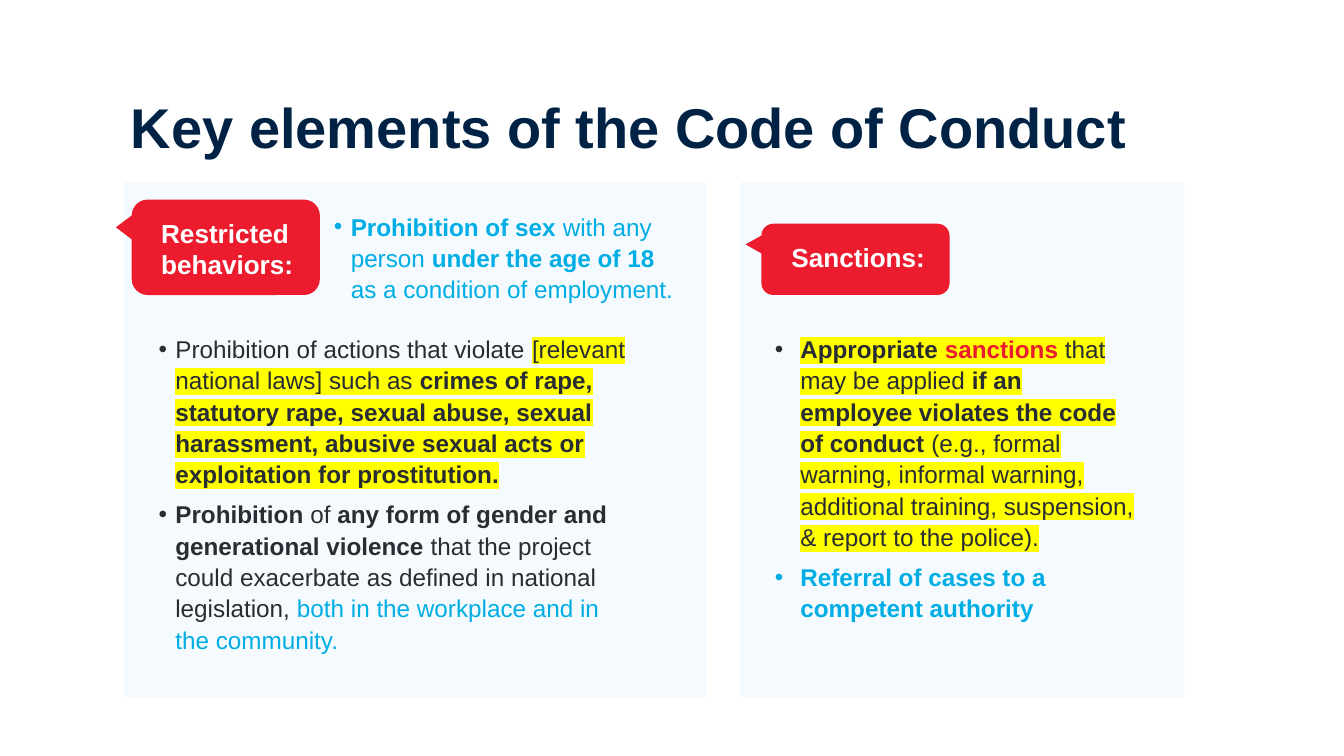
"""Build the slide on the key elements of the Code of Conduct."""
from lxml import etree
from pptx import Presentation
from pptx.dml.color import RGBColor
from pptx.enum.shapes import MSO_SHAPE as Shape
from pptx.enum.text import MSO_AUTO_SIZE as AutoSize
from pptx.oxml.ns import qn
from pptx.util import Inches, Pt

NAVY = RGBColor(0x00, 0x23, 0x45)
DARK = RGBColor(0x29, 0x2C, 0x32)
BLUE = RGBColor(0x00, 0xAD, 0xE4)
RED = RGBColor(0xEB, 0x1C, 0x2D)
CALLOUT_RED = RGBColor(0xEC, 0x1B, 0x2D)
PANEL_BLUE = RGBColor(0x9A, 0xD7, 0xF1)
WHITE = RGBColor(0xFF, 0xFF, 0xFF)

TITLE = {"name": "Arial", "size": Pt(60), "bold": True}
LABEL = {"name": "Arial", "size": Pt(28), "bold": True}
BODY = {"name": "Arial", "size": Pt(26)}
BODY_FRAME = {"margin_left": 0, "margin_right": 0, "margin_top": Inches(0.02), "margin_bottom": 0}
BODY_PARAGRAPH = {"line_spacing": Pt(33.6), "space_after": Pt(9)}
RIGHT_INDENT = Inches(0.7)


def add_text(shapes, bounds, paragraphs, font, indent=None):
    frame = shapes.add_textbox(*map(Inches, bounds)).text_frame
    frame.word_wrap = True
    frame.auto_size = AutoSize.SHAPE_TO_FIT_TEXT
    if indent:
        for name, value in BODY_FRAME.items():
            setattr(frame, name, value)
    for index, runs in enumerate(paragraphs):
        paragraph = frame.add_paragraph() if index else frame.paragraphs[0]
        if indent:
            properties = paragraph._p.get_or_add_pPr()
            properties.set("marL", str(Inches(indent)))
            properties.set("marR", str(RIGHT_INDENT))
            properties.set("indent", str(-Inches(indent)))
            etree.SubElement(properties, qn("a:buFont"), typeface="Arial")
            etree.SubElement(properties, qn("a:buChar"), char="•")
            for name, value in BODY_PARAGRAPH.items():
                setattr(paragraph, name, value)
        for text, color, bold, highlighted in runs:
            run = paragraph.add_run()
            run.text = text
            for name, value in {**font, "bold": bold}.items():
                setattr(run.font, name, value)
            run.font.color.rgb = color
            if highlighted:
                highlight = etree.Element(qn("a:highlight"))
                etree.SubElement(highlight, qn("a:srgbClr"), val="FFFF00")
                run.font._element.find(qn("a:solidFill")).addnext(highlight)


def add_block(shapes, kind, bounds, color):
    shape = shapes.add_shape(kind, *map(Inches, bounds))
    shape.shadow.inherit = False
    shape.fill.solid()
    shape.fill.fore_color.rgb = color
    shape.line.fill.background()
    return shape


presentation = Presentation()
presentation.slide_width = Inches(20)
presentation.slide_height = Inches(11.25)
slide = presentation.slides.add_slide(presentation.slide_layouts[6])

for left, width in ((11.02, 6.61), (1.85, 8.67)):
    panel = add_block(slide.shapes, Shape.RECTANGLE, (left, 2.71, width, 7.67), PANEL_BLUE)
    panel_color = panel.fill._xPr.find(qn("a:solidFill"))[0]
    etree.SubElement(panel_color, qn("a:alpha"), val="10000")

restrictions = [
    [
        ("Prohibition of actions that violate ", DARK, False, False),
        ("[relevant national laws] such as ", DARK, False, True),
        ("crimes of rape, statutory rape, sexual abuse, sexual harassment, "
         "abusive sexual acts or exploitation for prostitution.", DARK, True, True),
    ],
    [
        ("Prohibition ", DARK, True, False),
        ("of ", DARK, False, False),
        ("any form of gender and generational violence ", DARK, True, False),
        ("that the project could exacerbate as defined in national legislation, ", DARK, False, False),
        ("both in the workplace and in the community.", BLUE, False, False),
    ],
]
sanctions = [
    [
        ("Appropriate ", DARK, True, True),
        ("sanctions ", RED, True, True),
        ("that may be applied ", DARK, False, True),
        ("if an employee violates the code of conduct ", DARK, True, True),
        ("(e.g., formal warning, informal warning, additional training, "
         "suspension, & report to the police).", DARK, False, True),
    ],
    [("Referral of cases to a competent authority", BLUE, True, False)],
]
age_limit = [
    [
        ("Prohibition of sex ", BLUE, True, False),
        ("with any person ", BLUE, False, False),
        ("under the age of 18 ", BLUE, True, False),
        ("as a condition of employment.", BLUE, False, False),
    ],
]
title = [[("Key elements of the Code of Conduct", NAVY, True, False)]]

add_text(slide.shapes, (2.36, 4.92, 7.84, 4.88), restrictions, BODY, 0.25)
add_text(slide.shapes, (11.53, 4.92, 6.1, 4.4), sanctions, BODY, 0.38)
add_text(slide.shapes, (1.85, 1.33, 15.56, 1.11), title, TITLE)
add_text(slide.shapes, (4.97, 3.1, 5.83, 1.41), age_limit, BODY, 0.25)

for label, callout_bounds, label_bounds in (
    ("Restricted behaviors:", (2.65, 2.28, 1.42, 2.8), (2.3, 3.18, 2.2, 1.04)),
    ("Sanctions:", (12.2, 2.46, 1.06, 2.8), (11.68, 3.54, 2.2, 0.57)),
):
    group = slide.shapes.add_group_shape()
    callout = add_block(group.shapes, Shape.ROUNDED_RECTANGULAR_CALLOUT, callout_bounds, CALLOUT_RED)
    callout.rotation = 90
    for index, value in enumerate((-0.21, 0.584, 0.167)):
        callout.adjustments[index] = value
    add_text(group.shapes, label_bounds, [[(label, WHITE, True, False)]], LABEL)

presentation.save("out.pptx")
